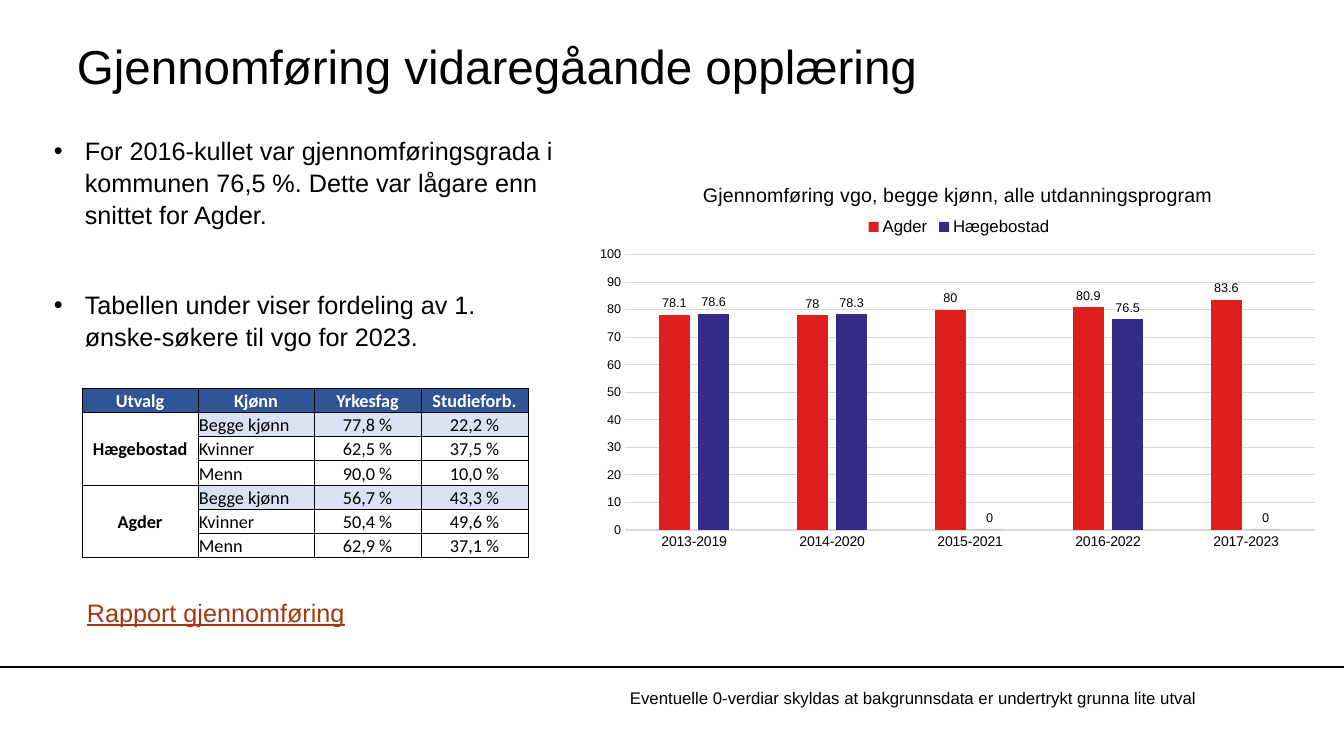
from lxml.etree import SubElement
from pptx import Presentation
from pptx.chart.data import CategoryChartData
from pptx.dml.color import RGBColor
from pptx.enum.chart import XL_CHART_TYPE, XL_LABEL_POSITION, XL_LEGEND_POSITION, XL_TICK_MARK
from pptx.enum.shapes import MSO_CONNECTOR
from pptx.enum.text import MSO_ANCHOR, PP_ALIGN
from pptx.oxml import parse_xml
from pptx.oxml.ns import nsdecls, qn
from pptx.util import Emu, Pt

EMU_PER_PX = 914400 / 100.8
COLORS = {
    "black": "000000", "white": "FFFFFF", "header": "305496", "band": "D9E1F2",
    "grid": "D9D9D9", "agder": "DF1F1D", "hægebostad": "342C86", "link": "9F3A14",
}
BULLETS = [
    "For 2016-kullet var gjennomføringsgrada i kommunen 76,5 %. "
    "Dette var lågare enn snittet for Agder.",
    "Tabellen under viser fordeling av 1. ønske-søkere til vgo for 2023.",
]
TABLE_ROWS = [
    ["Utvalg", "Kjønn", "Yrkesfag", "Studieforb."],
    ["Hægebostad", "Begge kjønn", "77,8 %", "22,2 %"],
    ["", "Kvinner", "62,5 %", "37,5 %"],
    ["", "Menn", "90,0 %", "10,0 %"],
    ["Agder", "Begge kjønn", "56,7 %", "43,3 %"],
    ["", "Kvinner", "50,4 %", "49,6 %"],
    ["", "Menn", "62,9 %", "37,1 %"],
]
COLUMN_WIDTHS = [116, 116, 107, 107]
PERIODS = ["2013-2019", "2014-2020", "2015-2021", "2016-2022", "2017-2023"]
COMPLETION = {
    "Agder": [78.1, 78, 80, 80.9, 83.6],
    "Hægebostad": [78.6, 78.3, 0, 76.5, 0],
}


def px(length):
    return Emu(round(length * EMU_PER_PX))


def rgb(name):
    return RGBColor.from_string(COLORS[name])


def style_font(font, size, color="black", name="Arial", bold=False):
    font.size = Pt(size)
    font.name = name
    font.bold = bold
    font.color.rgb = rgb(color)


def add_text(slide, text, left, top, width, height, size, color="black"):
    box = slide.shapes.add_textbox(px(left), px(top), px(width), px(height))
    frame = box.text_frame
    frame.word_wrap = True
    frame.text = text
    for paragraph in frame.paragraphs:
        style_font(paragraph.runs[0].font, size, color)
    return frame


def add_title(slide, text):
    frame = add_text(slide, text, 77, 27, 1119, 76, 34)
    frame.margin_left = frame.margin_right = frame.margin_top = frame.margin_bottom = 0
    frame.vertical_anchor = MSO_ANCHOR.MIDDLE


def add_bullets(slide, items):
    frame = add_text(slide, "\n".join(items), 44, 129, 521, 254, 18)
    for index, paragraph in enumerate(frame.paragraphs):
        properties = paragraph._p.get_or_add_pPr()
        properties.set("marL", str(px(31)))
        properties.set("indent", str(-px(31)))
        SubElement(properties, qn("a:buFont"), typeface="Arial")
        SubElement(properties, qn("a:buChar"), char="•")
        paragraph.line_spacing = 1.05
        if index:
            paragraph.space_before = Pt(42)


def add_rule(slide):
    rule = slide.shapes.add_connector(MSO_CONNECTOR.STRAIGHT, 0, px(667), px(1344), px(667))
    rule.line.color.rgb = rgb("black")
    rule.line.width = Pt(0.75)
    SubElement(rule._element.spPr, qn("a:effectLst"))


def add_borders(cell):
    properties = cell._tc.get_or_add_tcPr()
    for index, side in enumerate(["lnL", "lnR", "lnT", "lnB"]):
        properties.insert(index, parse_xml(
            f'<a:{side} {nsdecls("a")} w="{Pt(0.5)}"><a:solidFill>'
            f'<a:srgbClr val="{COLORS["black"]}"/></a:solidFill></a:{side}>'))


def style_cell(cell, row, column):
    is_header = row == 0
    is_group = column == 0 and not is_header
    is_total = column > 0 and row in (1, 4)
    cell.margin_left = cell.margin_right = cell.margin_top = px(1)
    cell.margin_bottom = 0
    cell.vertical_anchor = MSO_ANCHOR.MIDDLE if is_group else MSO_ANCHOR.BOTTOM
    cell.fill.solid()
    cell.fill.fore_color.rgb = rgb("header" if is_header else "band" if is_total else "white")
    add_borders(cell)
    paragraph = cell.text_frame.paragraphs[0]
    is_label = column == 1 and not is_header
    paragraph.alignment = PP_ALIGN.LEFT if is_label else PP_ALIGN.CENTER
    style_font(paragraph.font, 13, "white" if is_header else "black", "Calibri",
               is_header or is_group)
    for run in paragraph.runs:
        style_font(run.font, 13, "white" if is_header else "black", "Calibri",
                   is_header or is_group)


def add_applicant_table(slide):
    row_count = len(TABLE_ROWS)
    table = slide.shapes.add_table(row_count, len(COLUMN_WIDTHS), px(82), px(388),
                                   px(sum(COLUMN_WIDTHS)), px(170)).table
    for column, width in zip(table.columns, COLUMN_WIDTHS):
        column.width = px(width)
    for row_index, texts in enumerate(TABLE_ROWS):
        table.rows[row_index].height = px(170 / row_count)
        for column_index, text in enumerate(texts):
            cell = table.cell(row_index, column_index)
            cell.text_frame.text = text
            style_cell(cell, row_index, column_index)
    for first in (1, 4):
        table.cell(first, 0).merge(table.cell(first + 2, 0))


def set_layout(parent, successor_tags, target="", **fractions):
    """Place a chart part by fractions of the chart area."""
    for layout in parent.findall(qn("c:layout")):
        parent.remove(layout)
    modes = '<c:xMode val="edge"/><c:yMode val="edge"/>'
    places = "".join(f'<c:{key} val="{value}"/>' for key, value in fractions.items())
    layout = parse_xml(f'<c:layout {nsdecls("c")}><c:manualLayout>{target}{modes}{places}'
                       '</c:manualLayout></c:layout>')
    next(child for child in parent
         if child.tag in [qn(tag) for tag in successor_tags]).addprevious(layout)


def style_axes(chart):
    category_axis, value_axis = chart.category_axis, chart.value_axis
    for axis, size in ((category_axis, 10), (value_axis, 9)):
        axis.major_tick_mark = axis.minor_tick_mark = XL_TICK_MARK.NONE
        style_font(axis.tick_labels.font, size)
    category_axis.format.line.color.rgb = rgb("grid")
    category_axis.format.line.width = Pt(0.75)
    value_axis.minimum_scale, value_axis.maximum_scale = 0, 100
    value_axis.major_unit = 10
    value_axis.tick_labels.number_format = "#,##0"
    value_axis.tick_labels.number_format_is_linked = False
    value_axis.format.line.fill.background()
    value_axis.major_gridlines.format.line.color.rgb = rgb("grid")
    value_axis.major_gridlines.format.line.width = Pt(0.75)


def style_series(series):
    series.format.fill.solid()
    series.format.fill.fore_color.rgb = rgb(series.name.lower())
    series.invert_if_negative = False
    labels = series.data_labels
    labels.show_value = True
    labels.position = XL_LABEL_POSITION.OUTSIDE_END
    style_font(labels.font, 9)


def add_completion_chart(slide):
    data = CategoryChartData()
    data.categories = PERIODS
    for name, values in COMPLETION.items():
        data.add_series(name, values)
    chart = slide.shapes.add_chart(XL_CHART_TYPE.COLUMN_CLUSTERED, px(588), px(159),
                                   px(742), px(399), data).chart
    style_font(chart.font, 10)
    chart.has_title = True
    title = chart.chart_title
    title.text_frame.text = "Gjennomføring vgo, begge kjønn, alle utdanningsprogram"
    style_font(title.text_frame.paragraphs[0].runs[0].font, 14)
    title.include_in_layout = False
    chart.has_legend = True
    legend = chart.legend
    legend.position = XL_LEGEND_POSITION.TOP
    legend.include_in_layout = False
    style_font(legend.font, 12)
    style_axes(chart)
    plot = chart.plots[0]
    plot.gap_width, plot.overlap = 219, -27
    plot.vary_by_categories = False
    for series in plot.series:
        style_series(series)
    set_layout(title._element, ["c:overlay"], x=0.15, y=0.05)
    set_layout(legend._element, ["c:overlay"], x=0.37, y=0.14, w=0.26, h=0.06)
    set_layout(chart._chartSpace.chart.plotArea, ["c:barChart"],
               '<c:layoutTarget val="inner"/>', x=0.05, y=0.24, w=0.93, h=0.69)


def main():
    presentation = Presentation()
    presentation.slide_width, presentation.slide_height = px(1344), px(756)
    slide = presentation.slides.add_slide(presentation.slide_layouts[6])
    add_rule(slide)
    add_title(slide, "Gjennomføring vidaregåande opplæring")
    add_bullets(slide, BULLETS)
    add_applicant_table(slide)
    add_text(slide, "Eventuelle 0-verdiar skyldas at bakgrunnsdata er undertrykt grunna lite utval",
             620, 683, 590, 30, 12)
    report = add_text(slide, "Rapport gjennomføring", 77, 592, 283, 40, 18, "link")
    report.paragraphs[0].runs[0].font.underline = True
    add_completion_chart(slide)
    presentation.save("out.pptx")


if __name__ == "__main__":
    main()
